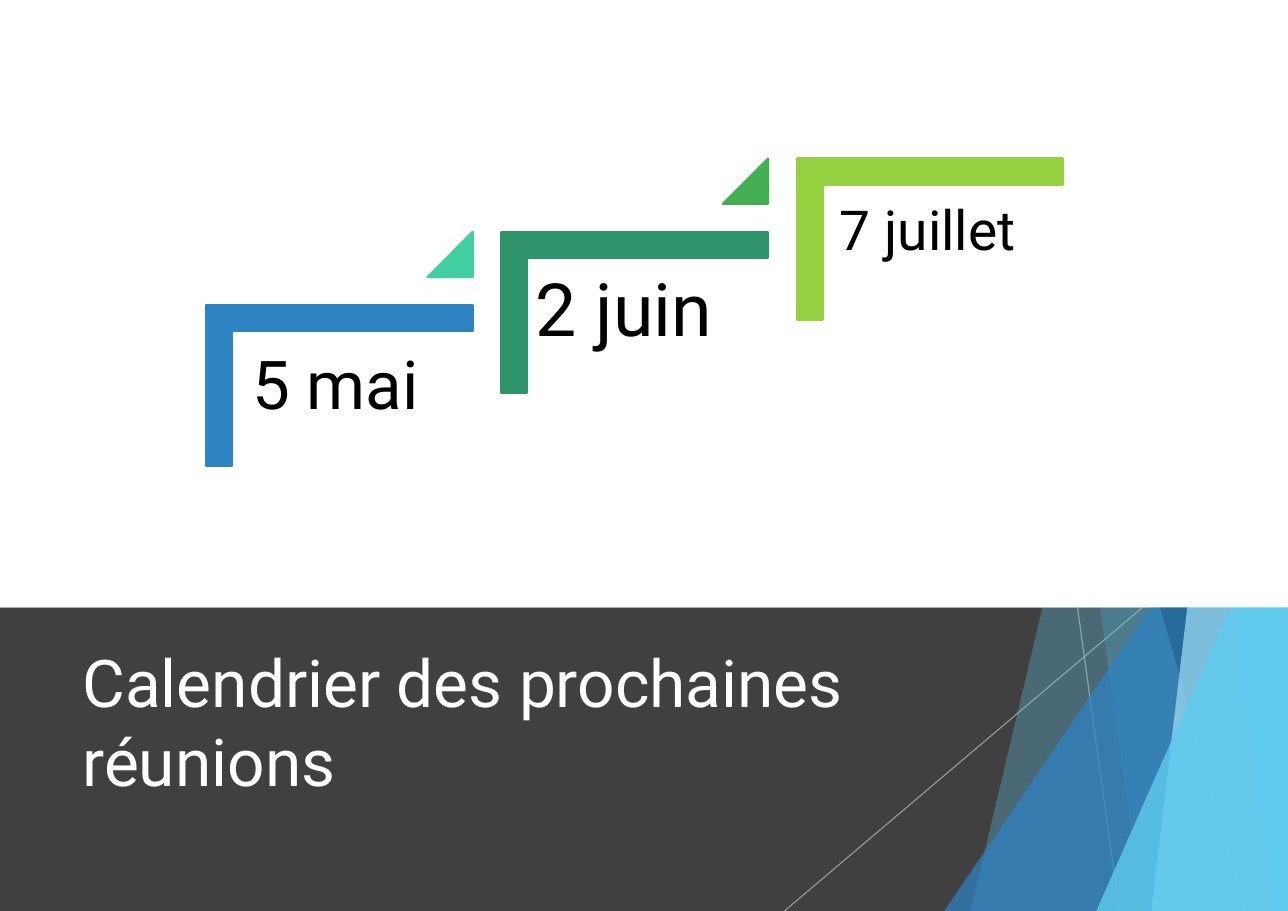
from dataclasses import dataclass

import pptx
import pptx.dml.color
import pptx.enum.shapes
import pptx.enum.text
import pptx.oxml
import pptx.oxml.ns
import pptx.util

SHAPE = pptx.enum.shapes.MSO_SHAPE
FONT = "Roboto"
WIDTH, HEIGHT = pptx.util.Inches(11.69), pptx.util.Inches(8.27)

# All places and lengths below are percentages of the slide's width or height.
BAND_TOP = 66.67
STEP_LEFT, STEP_TOP, STEP_W, STEP_H = 16.0, 33.5, 20.7, 17.65
STEP_PITCH, STEP_RISE = 22.93, 8.04
TEXT_H = 23.2
MARK_W, MARK_H = 3.5, 4.96


@dataclass
class Ray:
    top_x: float
    bottom_x: float


@dataclass
class Facet:
    """A pane reaching the right edge; it is a triangle when top_x is 100."""
    top_x: float
    bottom_x: float
    color: str
    opacity: int
    top: float = 0


@dataclass
class Step:
    date: str
    size: int
    color: str
    mark_color: str | None
    text_dx: float
    text_dy: float
    text_w: float
    inset: int


RAYS = [Ray(83.66, 86.91), Ray(88.71, 60.91)]
FACETS = [
    Facet(92.13, 75.36, "5FCBEF", 30),
    Facet(78.79, 88.71, "5FCBEF", 20),
    Facet(100, 73.31, "2E83C3", 72, top=44.4),
    Facet(76.56, 96.83, "226292", 70),
    Facet(97.78, 89.39, "9FE0F5", 70),
    Facet(89.73, 98.8, "5FCBEF", 65),
    Facet(100, 85.12, "5FCBEF", 80, top=52.36),
]
STEPS = [
    Step("5 mai", 44, "2E83C3", "42D0A2", 2.05, 2.9, 18.73, 13),
    Step("2 juin", 48, "2E946B", "42B051", 1.02, 2.15, 21.2, 14),
    Step("7 juillet", 36, "96D141", None, 2.05, 3.0, 18.73, 11),
]


def across(share: float) -> int:
    return round(WIDTH * share / 100)


def down(share: float) -> int:
    return round(HEIGHT * share / 100)


def rgb(color: str) -> pptx.dml.color.RGBColor:
    return pptx.dml.color.RGBColor.from_string(color)


def set_opacity(s, percent: int) -> None:
    for clr in s._element.spPr.iter(pptx.oxml.ns.qn("a:srgbClr")):
        alpha = clr.makeelement(pptx.oxml.ns.qn("a:alpha"), {"val": str(percent * 1000)})
        clr.append(alpha)


def paint(s, color: str, outline: bool = False) -> None:
    s.shadow.inherit = False
    s.fill.solid()
    s.fill.fore_color.rgb = rgb(color)
    if outline:
        s.line.color.rgb = rgb(color)
        s.line.width = pptx.util.Pt(1.5)
    else:
        s.line.fill.background()


def add_preset(shapes, kind, left: float, top: float, width: float, height: float,
               color: str, outline: bool = False):
    s = shapes.add_shape(kind, across(left), down(top), across(width), down(height))
    paint(s, color, outline)
    return s


def add_text(shapes, text: str, left: float, top: float, width: float, height: float,
             size: int, color: str):
    tf = shapes.add_textbox(across(left), down(top), across(width), down(height)).text_frame
    tf.word_wrap = True
    p = tf.paragraphs[0]
    p.text = text
    p.font.name = FONT
    p.font.size = pptx.util.Pt(size)
    p.font.color.rgb = rgb(color)
    return tf


def add_ray(shapes, ray: Ray) -> None:
    s = shapes.add_connector(pptx.enum.shapes.MSO_CONNECTOR.STRAIGHT,
                             across(ray.top_x), down(BAND_TOP), across(ray.bottom_x), HEIGHT)
    s.line.color.rgb = rgb("BFBFBF")
    s.line.width = pptx.util.Pt(0.75)
    set_opacity(s, 70)
    s._element.spPr.append(pptx.oxml.parse_xml(
        f"<a:effectLst {pptx.oxml.ns.nsdecls('a')}/>"))


def add_facet(shapes, facet: Facet) -> None:
    if facet.top_x == 100:
        s = add_preset(shapes, SHAPE.ISOSCELES_TRIANGLE, facet.bottom_x, facet.top,
                       100 - facet.bottom_x, 100 - facet.top, facet.color)
        s.adjustments[0] = 1
    else:
        outline = shapes.build_freeform(across(facet.top_x), down(facet.top))
        outline.add_line_segments(
            [(WIDTH, down(facet.top)), (WIDTH, HEIGHT), (across(facet.bottom_x), HEIGHT)])
        s = outline.convert_to_shape()
        paint(s, facet.color)
    set_opacity(s, facet.opacity)


def add_step(shapes, step: Step, index: int) -> None:
    left = STEP_LEFT + index * STEP_PITCH
    top = STEP_TOP - index * STEP_RISE
    # The corner is turned a quarter, so its own width is the height seen.
    w, h = down(STEP_H), across(STEP_W)
    s = shapes.add_shape(SHAPE.CORNER, across(left) + (h - w) // 2,
                         down(top) + (w - h) // 2, w, h)
    s.rotation = 90
    s.adjustments[0] = s.adjustments[1] = 0.16
    paint(s, step.color, outline=True)

    tf = add_text(shapes, step.date, left + step.text_dx, top + step.text_dy,
                  step.text_w, TEXT_H, step.size, "000000")
    tf.margin_left = tf.margin_right = pptx.util.Pt(step.inset)
    tf.margin_top = tf.margin_bottom = pptx.util.Pt(step.inset)
    tf.paragraphs[0].line_spacing = 0.9

    if step.mark_color:
        s = add_preset(shapes, SHAPE.ISOSCELES_TRIANGLE, left + STEP_W - MARK_W,
                       top - STEP_RISE, MARK_W, MARK_H, step.mark_color, outline=True)
        s.adjustments[0] = 1


def main() -> None:
    prs = pptx.Presentation()
    prs.slide_width, prs.slide_height = WIDTH, HEIGHT
    shapes = prs.slides.add_slide(prs.slide_layouts[6]).shapes

    add_preset(shapes, SHAPE.RECTANGLE, 0, BAND_TOP, 100, 100 - BAND_TOP, "404040")
    for ray in RAYS:
        add_ray(shapes, ray)
    for facet in FACETS:
        add_facet(shapes, facet)
    title = add_text(shapes, "Calendrier des prochaines réunions",
                     5.56, 69.5, 70.5, 19.2, 43, "FFFFFF")
    title.vertical_anchor = pptx.enum.text.MSO_ANCHOR.MIDDLE

    add_preset(shapes, SHAPE.RECTANGLE, 0, 0, 100, BAND_TOP, "FFFFFF")
    for index, step in enumerate(STEPS):
        add_step(shapes, step, index)

    prs.save("out.pptx")


if __name__ == "__main__":
    main()
